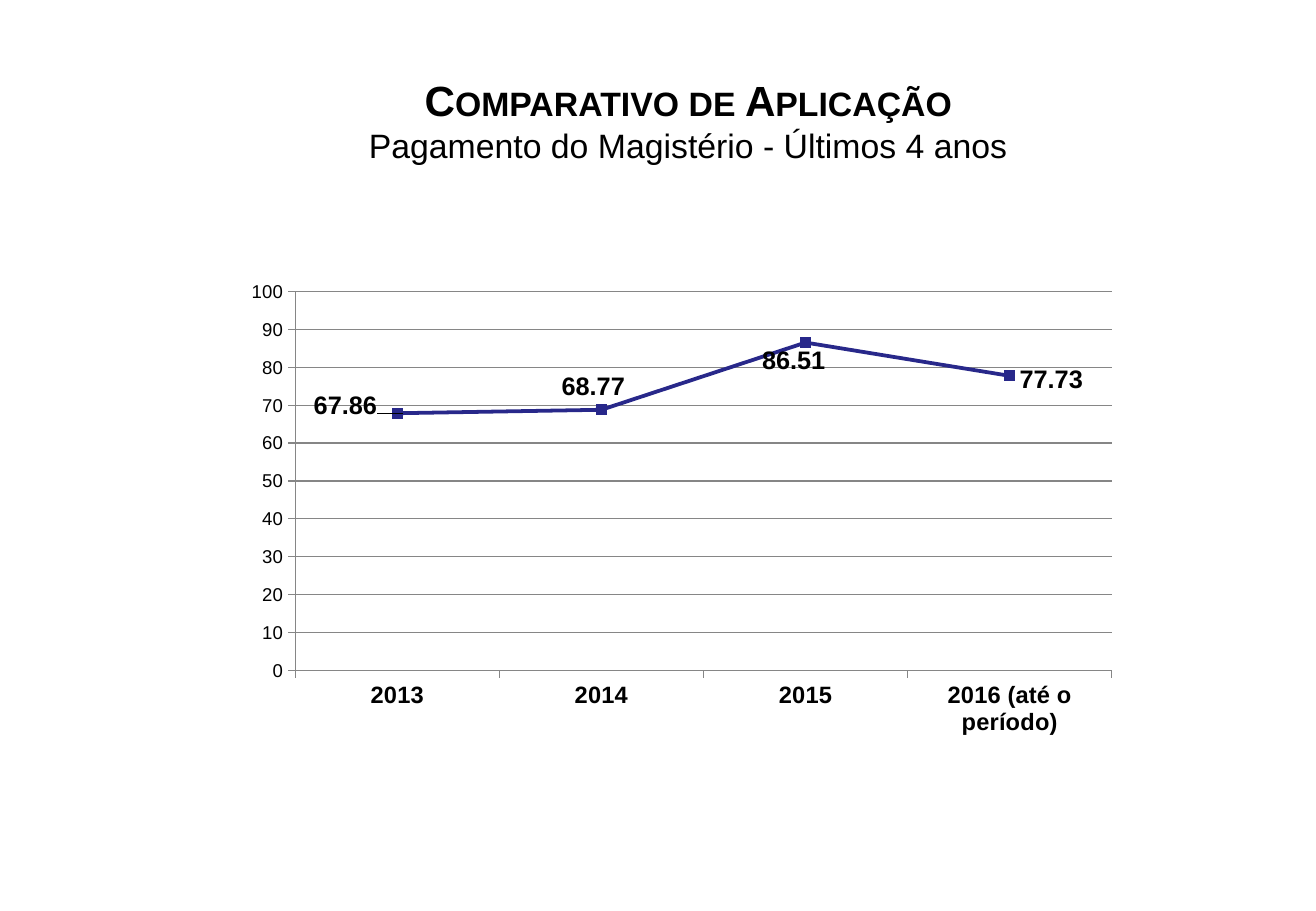
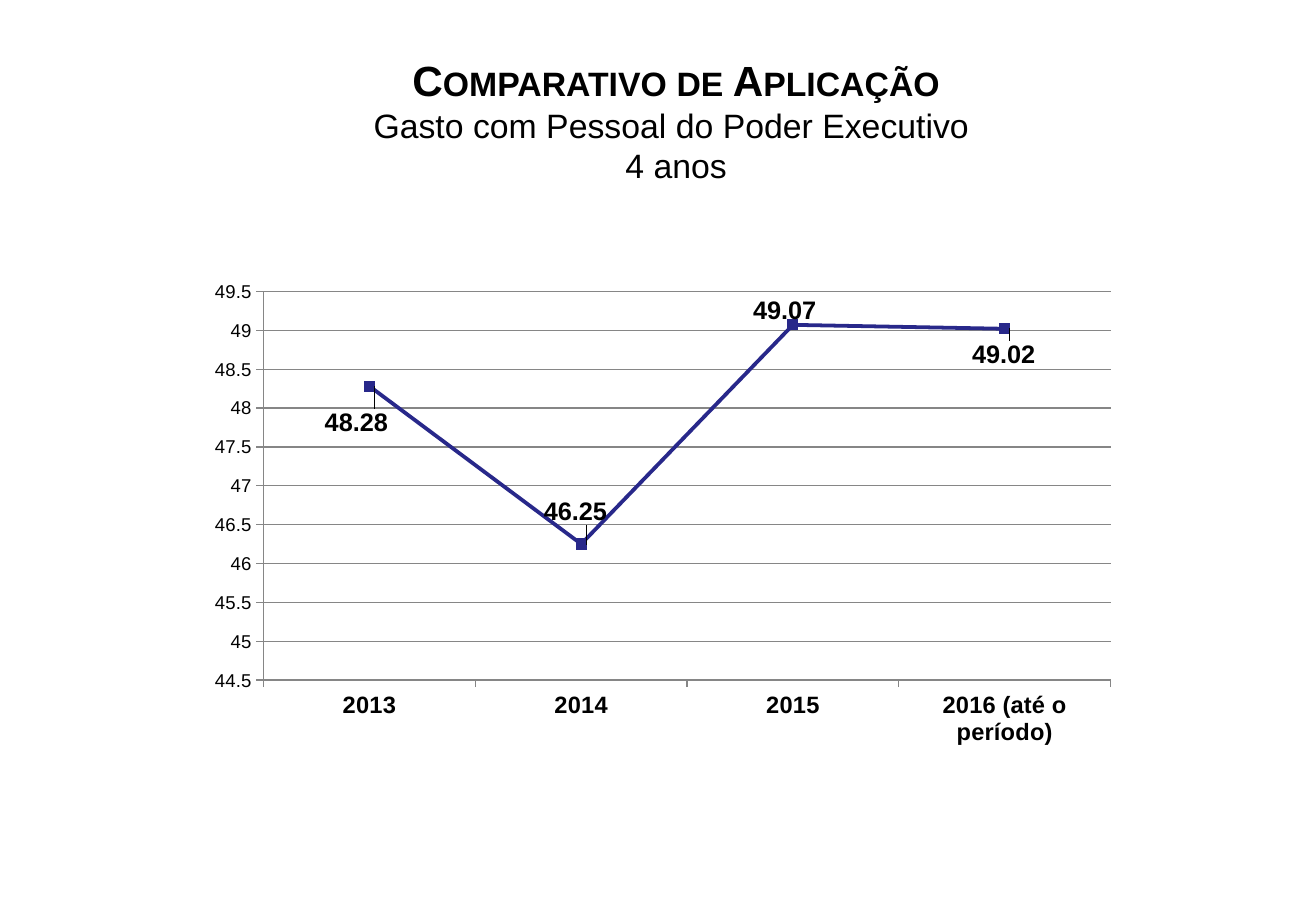
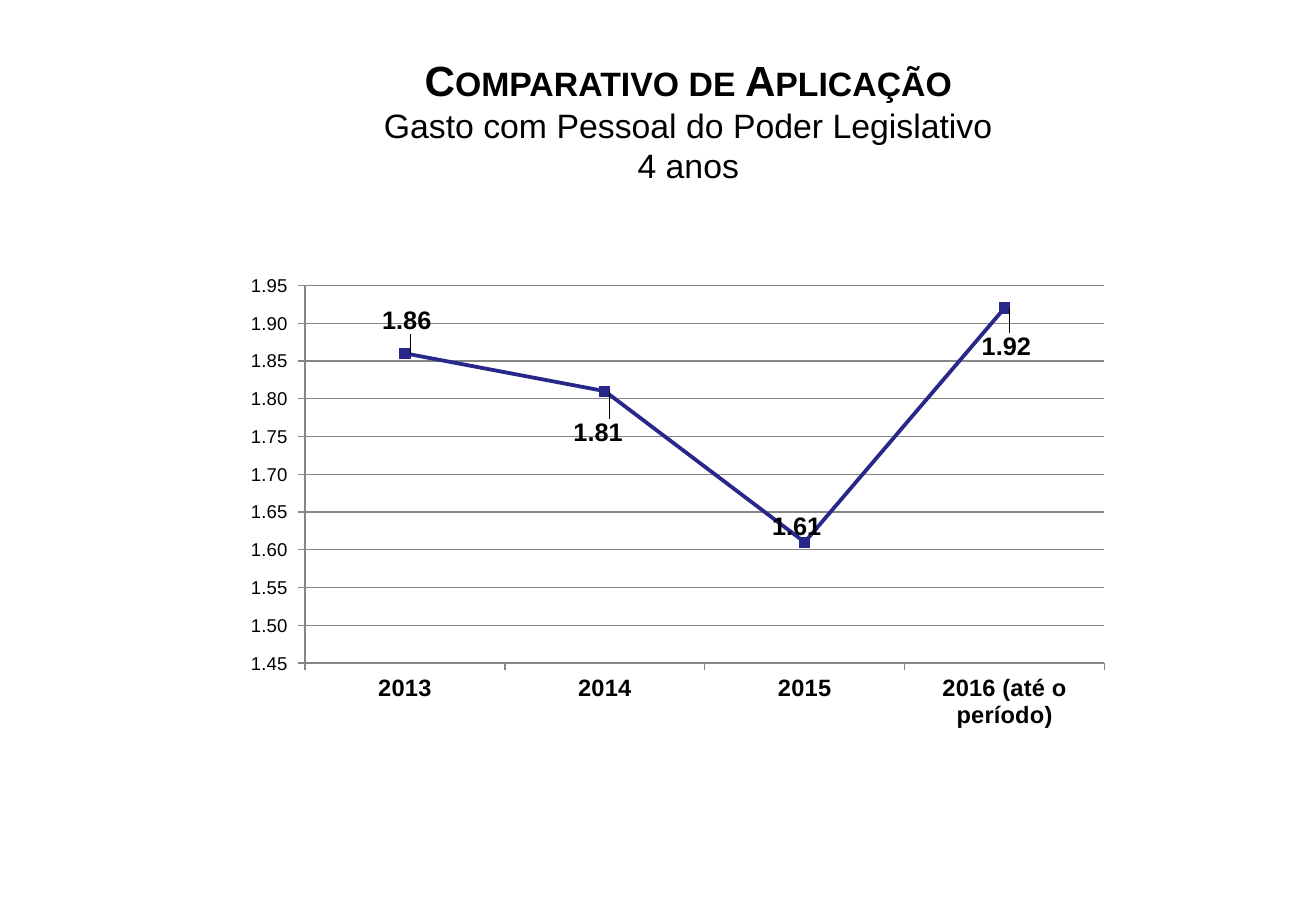
from lxml import etree
from pptx import Presentation
from pptx.chart.data import CategoryChartData
from pptx.dml.color import RGBColor
from pptx.enum.chart import XL_CHART_TYPE, XL_LABEL_POSITION, XL_MARKER_STYLE, XL_TICK_MARK
from pptx.enum.text import MSO_ANCHOR, PP_ALIGN
from pptx.oxml.ns import qn
from pptx.util import Inches, Pt

FONT = "Arial"
BLACK, LINE_BLUE, GRID_GRAY = "000000", "28288A", "868686"
HEADING = "Comparativo de Aplicação"
YEARS = ["2013", "2014", "2015", "2016 (até o período)"]

# frame: left, top, width, height; plot: left, top, right, bottom on the page
# scale: minimum, maximum, step; shifts: inches from the place right of the point
SLIDES = [
    dict(subtitle=["Pagamento do Magistério - Últimos 4 anos"], title_left=2.76,
         values=[67.86, 68.77, 86.51, 77.73], scale=(0, 100, 10), format="General",
         frame=(1.93, 2.23, 7.37, 3.9), plot=(2.43, 2.4, 9.15, 5.52),
         shifts=[(-0.77, -0.06), (-0.41, -0.19), (-0.44, 0.15), (0, 0.03)]),
    dict(subtitle=["Gasto com Pessoal do Poder Executivo ", "4 anos"], title_left=2.66,
         values=[48.28, 46.25, 49.07, 49.02], scale=(44.5, 49.5, 0.5), format="General",
         frame=(1.61, 2.23, 7.69, 3.98), plot=(2.17, 2.4, 9.14, 5.6),
         shifts=[(-0.45, 0.3), (-0.39, -0.27), (-0.41, -0.12), (-0.35, 0.21)]),
    dict(subtitle=["Gasto com Pessoal do Poder Legislativo", "4 anos"], title_left=2.76,
         values=[1.86, 1.81, 1.61, 1.92], scale=(1.45, 1.95, 0.05),
         format='_-* #,##0.00_-;\\-* #,##0.00_-;_-* "-"??_',
         frame=(1.87, 2.18, 7.37, 3.9), plot=(2.51, 2.35, 9.09, 5.46),
         shifts=[(-0.27, -0.27), (-0.34, 0.34), (-0.35, -0.13), (-0.27, 0.32)]),
]


def color(value):
    return RGBColor.from_string(value)


def style_font(font, size, bold=False):
    font.name, font.size, font.bold = FONT, Pt(size), bold
    font.color.rgb = color(BLACK)


def style_line(line, value, width):
    line.color.rgb = color(value)
    line.width = Pt(width)


def manual_layout(**settings):
    layout = etree.Element(qn("c:layout"))
    manual = etree.SubElement(layout, qn("c:manualLayout"))
    for name, value in settings.items():
        etree.SubElement(manual, qn("c:" + name)).set("val", str(value))
    return layout


def add_title(page, left, subtitle):
    box = page.shapes.add_textbox(Inches(left), Inches(0.36), Inches(5.81), Inches(1.25))
    frame = box.text_frame
    frame.word_wrap = True
    frame.vertical_anchor = MSO_ANCHOR.MIDDLE
    para = frame.paragraphs[0]
    para.alignment = PP_ALIGN.CENTER
    heading = para.add_run()
    heading.text = HEADING
    style_font(heading.font, 25, True)
    heading.font._element.set("cap", "small")
    for line in subtitle:
        para.add_line_break()
        span = para.add_run()
        span.text = line
        style_font(span.font, 20)


def style_axis(axis, size, bold=False):
    axis.major_tick_mark = XL_TICK_MARK.OUTSIDE
    axis.minor_tick_mark = XL_TICK_MARK.NONE
    style_font(axis.tick_labels.font, size, bold)
    style_line(axis.format.line, GRID_GRAY, 0.75)


def add_line_chart(page, content):
    data = CategoryChartData()
    data.categories = YEARS
    data.add_series("Series 1", content["values"])
    left, top, width, height = content["frame"]
    chart = page.shapes.add_chart(XL_CHART_TYPE.LINE_MARKERS, Inches(left), Inches(top),
                                  Inches(width), Inches(height), data).chart
    chart.has_legend = chart.has_title = False
    style_font(chart.font, 18)

    # Axes and grid
    style_axis(chart.category_axis, 14, True)
    axis = chart.value_axis
    style_axis(axis, 11)
    axis.minimum_scale, axis.maximum_scale, axis.major_unit = content["scale"]
    axis.tick_labels.number_format = content["format"]
    axis.tick_labels.number_format_is_linked = False
    axis.has_major_gridlines = True
    style_line(axis.major_gridlines.format.line, GRID_GRAY, 0.75)

    # Plot area
    x1, y1, x2, y2 = content["plot"]
    area = chart._chartSpace.chart.plotArea
    for old in area.findall(qn("c:layout")):
        area.remove(old)
    area.insert(0, manual_layout(
        layoutTarget="inner", xMode="edge", yMode="edge",
        x=(x1 - left) / width, y=(y1 - top) / height,
        w=(x2 - x1) / width, h=(y2 - y1) / height))

    # Line, markers and shifted labels
    plot = chart.plots[0]
    plot.vary_by_categories = False
    series = plot.series[0]
    series.smooth = False
    style_line(series.format.line, LINE_BLUE, 2.25)
    series.marker.style, series.marker.size = XL_MARKER_STYLE.SQUARE, 6
    series.marker.format.fill.solid()
    series.marker.format.fill.fore_color.rgb = color(LINE_BLUE)
    style_line(series.marker.format.line, LINE_BLUE, 0.75)
    labels = series.data_labels
    labels.show_value = True
    style_font(labels.font, 15, True)
    for index, (dx, dy) in enumerate(content["shifts"]):
        label = series.points[index].data_label
        style_font(label.font, 15, True)
        label.position = XL_LABEL_POSITION.RIGHT
        element = labels._element.findall(qn("c:dLbl"))[index]
        element.insert(1, manual_layout(x=dx / width, y=dy / height))


def main():
    deck = Presentation()
    deck.slide_width, deck.slide_height = Inches(10.83), Inches(7.5)
    for content in SLIDES:
        page = deck.slides.add_slide(deck.slide_layouts[6])
        add_title(page, content["title_left"], content["subtitle"])
        add_line_chart(page, content)
    deck.save("out.pptx")


if __name__ == "__main__":
    main()
